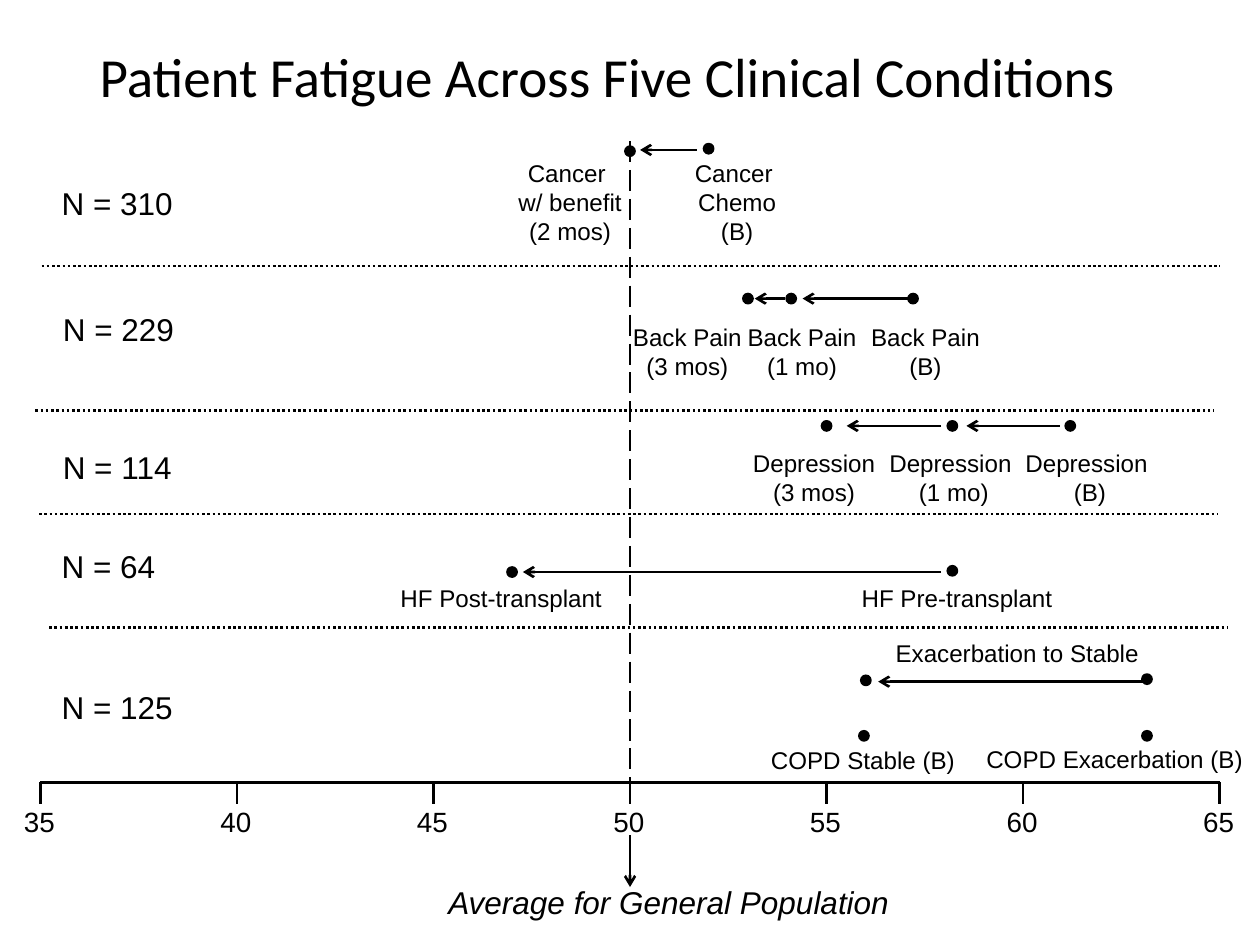
from lxml import etree
from pptx import Presentation
from pptx import util as u
from pptx.dml.color import RGBColor
from pptx.enum import dml, shapes, text
from pptx.oxml.ns import qn

BLACK = RGBColor(0, 0, 0)
AXIS_LEFT, AXIS_RIGHT, AXIS_Y = 0.32, 9.68, 6.21
SCORE_MIN, SCORE_MAX, SCORE_STEP = 35, 65, 5
POPULATION_MEAN = 50
DOT = 0.08
LABEL_SIZE, TICK_SIZE, NOTE_SIZE = 13.8, 15.9, 18

# Each condition: sample size (text, left, top, width), dots (score, y),
# arrows (from x, to x, y) and labels (text, left, top, width)
CONDITIONS = [
    {"sample": ("N = 310", 0.39, 1.41, 1.09),
     "dots": [(52, 1.18), (50, 1.2)],
     "arrows": [(5.53, 5.08, 1.19)],
     "labels": [("Cancer \nChemo\n(B)", 5.41, 1.21, 0.88),
                ("Cancer \nw/ benefit\n(2 mos)", 4.01, 1.21, 1.03)]},
    {"sample": ("N = 229", 0.4, 2.41, 1.09),
     "dots": [(57.2, 2.37), (54.1, 2.37), (53, 2.37)],
     "arrows": [(7.21, 6.37, 2.37), (6.23, 5.99, 2.37)],
     "labels": [("Back Pain\n(B)", 6.81, 2.51, 1.07),
                ("Back Pain\n(1 mo)", 5.83, 2.51, 1.07),
                ("Back Pain\n(3 mos)", 4.92, 2.51, 1.07)]},
    {"sample": ("N = 114", 0.4, 3.51, 1.07),
     "dots": [(61.2, 3.38), (58.2, 3.38), (55, 3.38)],
     "arrows": [(8.41, 7.67, 3.38), (7.47, 6.72, 3.38)],
     "labels": [("Depression \n(B)", 8.03, 3.51, 1.24),
                ("Depression \n(1 mo)", 6.95, 3.51, 1.24),
                ("Depression\n(3 mos)", 5.87, 3.51, 1.18)]},
    {"sample": ("N = 64", 0.39, 4.29, 0.95),
     "dots": [(58.2, 4.53), (47, 4.54)],
     "arrows": [(7.47, 4.15, 4.54)],
     "labels": [("HF Pre-transplant", 6.74, 4.58, 1.74),
                ("HF Post-transplant", 3.08, 4.58, 1.82)]},
    {"sample": ("N = 125", 0.39, 5.41, 1.09),
     "dots": [(63.15, 5.39), (56, 5.4), (63.15, 5.84), (55.95, 5.84)],
     "arrows": [(9.11, 6.97, 5.41)],
     "labels": [("Exacerbation to Stable", 7.01, 5.02, 2.22),
                ("COPD Stable (B)", 6.02, 5.87, 1.68),
                ("COPD Exacerbation (B)", 7.73, 5.86, 2.27)]},
]
# Dotted dividers between conditions: left, y
DIVIDERS = [(0.33, 2.11), (0.28, 3.26), (0.31, 4.08), (0.39, 4.98)]
DIVIDER_WIDTH = 9.35


def score_x(score):
    share = (score - SCORE_MIN) / (SCORE_MAX - SCORE_MIN)
    return AXIS_LEFT + share * (AXIS_RIGHT - AXIS_LEFT)


def add_line(slide, x1, y1, x2, y2, dash=None, arrow=False):
    line = slide.shapes.add_connector(
        shapes.MSO_CONNECTOR.STRAIGHT,
        u.Inches(x1), u.Inches(y1), u.Inches(x2), u.Inches(y2))
    line.line.color.rgb = BLACK
    line.line.width = u.Pt(1.5)
    if dash:
        line.line.dash_style = dash
    if arrow:
        etree.SubElement(line.line._get_or_add_ln(), qn("a:tailEnd"), type="arrow")
    etree.SubElement(line._element.spPr, qn("a:effectLst"))


def format_text(frame, size, font, align=None, italic=None):
    for paragraph in frame.paragraphs:
        paragraph.alignment = align
        for run in paragraph.runs:
            run.font.size = u.Pt(size)
            run.font.name = font
            run.font.italic = italic
            run.font.color.rgb = BLACK


def add_label(slide, words, left, top, width, size=LABEL_SIZE, italic=None):
    lines = words.count("\n") + 1
    height = 0.1 + lines * size * 0.017
    box = slide.shapes.add_textbox(
        u.Inches(left), u.Inches(top), u.Inches(width), u.Inches(height))
    frame = box.text_frame
    frame.word_wrap = False
    frame.auto_size = text.MSO_AUTO_SIZE.SHAPE_TO_FIT_TEXT
    frame.text = words
    align = text.PP_ALIGN.CENTER if lines > 1 else None
    format_text(frame, size, "Arial", align, italic)


def add_dot(slide, score, y):
    dot = slide.shapes.add_shape(
        shapes.MSO_SHAPE.OVAL, u.Inches(score_x(score) - DOT / 2),
        u.Inches(y - DOT / 2), u.Inches(DOT), u.Inches(DOT))
    dot.shadow.inherit = False
    dot.fill.solid()
    dot.fill.fore_color.rgb = BLACK
    dot.line.color.rgb = BLACK
    dot.line.width = u.Pt(1)


def add_title(slide, words):
    title = slide.shapes.title
    title.left, title.top = u.Inches(0.69), u.Inches(0.15)
    title.width, title.height = u.Inches(8.62), u.Inches(0.96)
    frame = title.text_frame
    frame.text = words
    frame.vertical_anchor = text.MSO_ANCHOR.MIDDLE
    frame.paragraphs[0].line_spacing = 0.9
    format_text(frame, 31.5, "Calibri", text.PP_ALIGN.LEFT)
    # Line the heading up with the text inset of the other boxes
    frame.margin_left = frame.margin_right = u.Inches(0.1)


def add_axis(slide):
    add_line(slide, AXIS_LEFT, AXIS_Y, AXIS_RIGHT, AXIS_Y)
    for score in range(SCORE_MIN, SCORE_MAX + 1, SCORE_STEP):
        x = score_x(score)
        add_line(slide, x, AXIS_Y + 0.17, x, AXIS_Y)
        add_label(slide, str(score), x - 0.23, AXIS_Y + 0.13, 0.45, TICK_SIZE)


def add_population_mean(slide):
    x = score_x(POPULATION_MEAN)
    add_line(slide, x, 1.12, x, AXIS_Y, dash=dml.MSO_LINE.LONG_DASH)
    add_line(slide, x, 6.63, x, 7.04, arrow=True)
    add_label(slide, "Average for General Population", 3.46, 6.96, 3.73,
              NOTE_SIZE, italic=True)


def add_condition(slide, condition):
    add_label(slide, *condition["sample"], size=NOTE_SIZE)
    for start, end, y in condition["arrows"]:
        add_line(slide, start, y, end, y, arrow=True)
    for score, y in condition["dots"]:
        add_dot(slide, score, y)
    for label in condition["labels"]:
        add_label(slide, *label)


def main():
    prs = Presentation()
    prs.slide_width, prs.slide_height = u.Inches(10), u.Inches(7.5)
    slide = prs.slides.add_slide(prs.slide_layouts[5])
    add_title(slide, "Patient Fatigue Across Five Clinical Conditions")
    add_axis(slide)
    add_population_mean(slide)
    for left, y in DIVIDERS:
        add_line(slide, left, y, left + DIVIDER_WIDTH, y,
                 dash=dml.MSO_LINE.ROUND_DOT)
    for condition in CONDITIONS:
        add_condition(slide, condition)
    prs.save("out.pptx")


if __name__ == "__main__":
    main()
